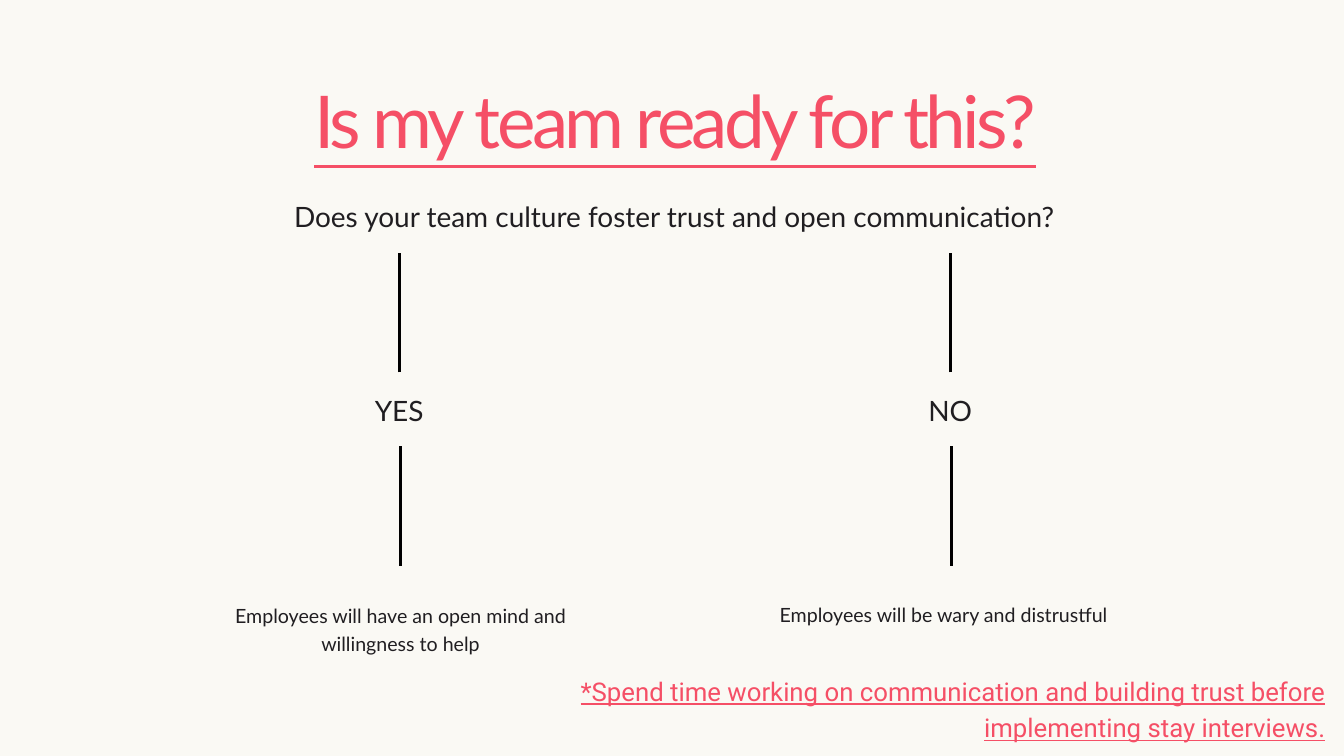
from pptx import Presentation
from pptx.dml.color import RGBColor
from pptx.enum.shapes import MSO_CONNECTOR
from pptx.enum.text import MSO_ANCHOR, MSO_AUTO_SIZE, PP_ALIGN
from pptx.oxml.ns import qn
from pptx.util import Inches, Pt
from lxml.etree import SubElement

CORAL, INK = "F54F66", "201E21"


def color(hex_code):
    return RGBColor.from_string(hex_code)


def write(text, left, top, width, height, box=None, size=30, leading=42, font="Lato",
          fill=INK, align=PP_ALIGN.CENTER, underline=None, spacing=None):
    place = [Inches(v) for v in (left, top, width, height)]
    if box is None:
        box = slide.shapes.add_textbox(*place)
    else:
        box.left, box.top, box.width, box.height = place
    frame = box.text_frame
    frame.word_wrap = True
    frame.auto_size = MSO_AUTO_SIZE.NONE
    frame.vertical_anchor = MSO_ANCHOR.TOP
    frame.margin_left = frame.margin_right = frame.margin_top = frame.margin_bottom = 0
    paragraph = frame.paragraphs[0]
    paragraph.alignment = align
    paragraph.line_spacing = Pt(leading)
    run = paragraph.add_run()
    run.text = text
    run.font.name, run.font.size = font, Pt(size)
    run.font.underline = underline
    run.font.color.rgb = color(fill)
    if spacing is not None:
        run.font._element.set("spc", str(round(spacing * 100)))


prs = Presentation()
prs.slide_width, prs.slide_height = Inches(20), Inches(11.25)
slide = prs.slides.add_slide(prs.slide_layouts[5])
slide.background.fill.solid()
slide.background.fill.fore_color.rgb = color("FAF9F4")

# Title and question
write("Is my team ready for this?", 3.79, 1.12, 12.51, 1.29, box=slide.shapes.title,
      size=78, leading=93.6, fill=CORAL, underline=True, spacing=-3.9)
write("Does your team culture foster trust and open communication?", 3.13, 2.89, 13.81, 0.56)

# Yes and no branches: stem, answer, stem, outcome
branches = [
    (5.94, "YES", "Employees will have an open mind and willingness to help", 3.05, 8.93, 0.8),
    (14.14, "NO", "Employees will be wary and distrustful", 11.13, 8.92, 0.39),
]
for center, answer, outcome, outcome_left, outcome_top, outcome_height in branches:
    for stem_x, stem_top in ((center, 3.76), (center + 0.02, 6.64)):
        stem = slide.shapes.add_connector(
            MSO_CONNECTOR.STRAIGHT, Inches(stem_x), Inches(stem_top + 1.78),
            Inches(stem_x), Inches(stem_top))
        stem.line.color.rgb = color("000000")
        stem.line.width = Pt(3)
        SubElement(stem._element.spPr, qn("a:effectLst"))
    write(answer, center - 1.09, 5.78, 2.18, 0.56)
    write(outcome, outcome_left, outcome_top, 5.82, outcome_height, size=21, leading=29.4)

# Advice for the "no" branch
write("*Spend time working on communication and building trust before implementing stay interviews.",
      7.03, 9.98, 12.69, 1.58, size=27.6, leading=38.6, font="Roboto", fill=CORAL,
      align=PP_ALIGN.RIGHT, underline=True)

prs.save("out.pptx")
